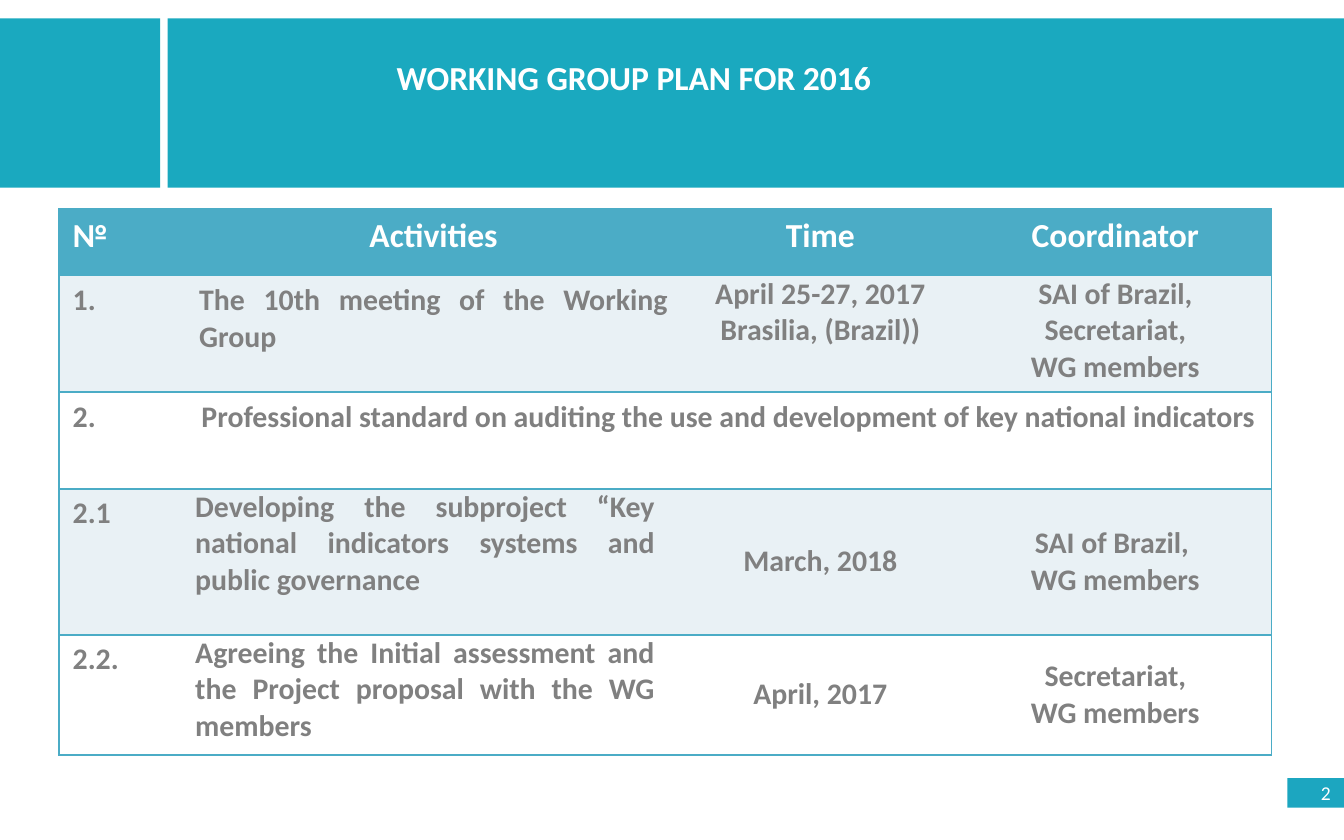
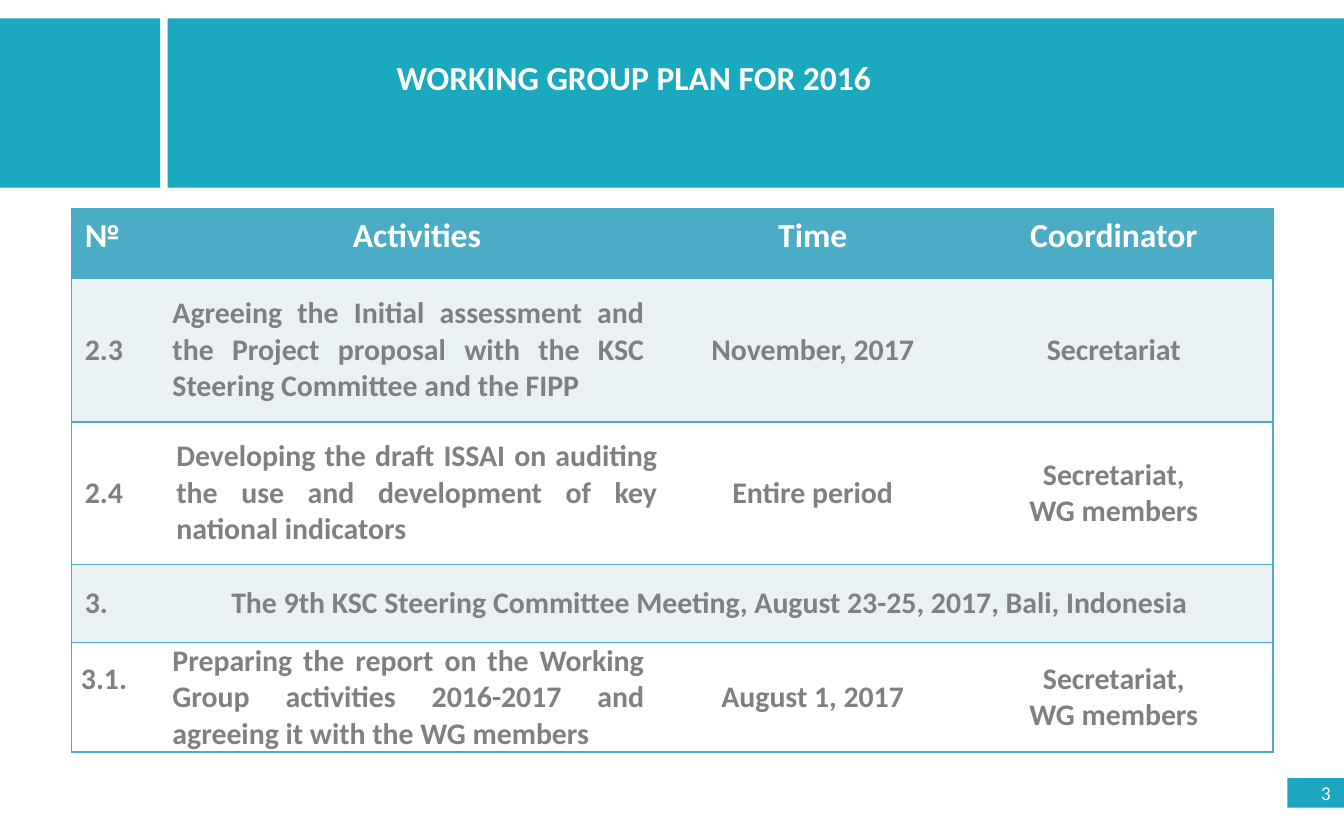
from dataclasses import dataclass

from lxml import etree
from pptx import Presentation
from pptx.dml.color import RGBColor
from pptx.enum.shapes import MSO_SHAPE
from pptx.enum.text import MSO_ANCHOR, MSO_AUTO_SIZE, PP_ALIGN
from pptx.oxml.ns import qn
from pptx.util import Cm, Pt

RECTANGLE = MSO_SHAPE.RECTANGLE
TOP, MIDDLE = MSO_ANCHOR.TOP, MSO_ANCHOR.MIDDLE
LEFT, CENTER = PP_ALIGN.LEFT, PP_ALIGN.CENTER
RIGHT, JUSTIFY = PP_ALIGN.RIGHT, PP_ALIGN.JUSTIFY
FIXED_SIZE = MSO_AUTO_SIZE.NONE


@dataclass(frozen=True)
class Theme:
    font: str = "Calibri"
    band: str = "1AA9BF"
    number_tag: str = "1CA6C0"
    table_accent: str = "4BACC6"
    tint: str = "E9F1F5"
    white: str = "FFFFFF"
    body_text: str = "808080"
    heading_size: float = 18
    body_size: float = 16
    number_size: float = 10.5


THEME = Theme()
TITLE = "WORKING GROUP PLAN FOR 2016"
HEADER = ("TTTT", ["№", "Activities", "Time", "Coordinator"])
NO_GRID_STYLE = "{2D5ABB26-0587-4C30-8999-92F81FD0307C}"

# Each row has one layout letter per cell: T top, M middle, lower case for
# tight margins. In a row of two cells the second spans the other columns.
PLANS = [
    {
        "number": 2,
        "left": 1.12,
        "columns": [2.39, 9.37, 5.25, 5.9],
        "heights": [1.26, 2.2, 1.83, 2.76, 2.27],
        "rows": [
            HEADER,
            ("TTtt", ["1.", "The 10th meeting of the Working Group",
                      "April 25-27, 2017\nBrasilia, (Brazil))",
                      "SAI of Brazil,\nSecretariat,\nWG members"]),
            ("TT", ["2.", "Professional standard on auditing the use and "
                          "development of key national indicators"]),
            ("Ttmm", ["2.1", "Developing the subproject “Key national indicators "
                             "systems and public governance",
                      "March, 2018", "SAI of Brazil, \nWG members"]),
            ("Ttmm", ["2.2.", "Agreeing the Initial assessment and the Project "
                              "proposal with the WG members",
                      "April, 2017", "Secretariat,\nWG members"]),
        ],
    },
    {
        "number": 3,
        "left": 1.35,
        "columns": [1.73, 9.6, 5.36, 6.02],
        "heights": [1.3, 2.73, 2.69, 1.48, 2.06],
        "rows": [
            HEADER,
            ("Mmmm", ["2.3", "Agreeing the Initial assessment and the Project "
                             "proposal with the KSC Steering Committee and the FIPP",
                      "November, 2017", "Secretariat"]),
            ("MMMM", ["2.4", "Developing the draft ISSAI on auditing the use and "
                             "development of key national indicators",
                      "Entire period", "Secretariat,\nWG members"]),
            ("Mm", ["3.", "The 9th KSC Steering Committee Meeting, "
                          "August 23-25, 2017, Bali, Indonesia"]),
            ("ttmm", ["3.1.", "Preparing the report on the Working Group activities "
                              "2016-2017 and agreeing it with the WG members",
                      "August 1, 2017", "Secretariat,\nWG members"]),
        ],
    },
]


def format_text(frame, size, color, bold, align):
    for paragraph in frame.paragraphs:
        paragraph.alignment = align
        for run in paragraph.runs:
            run.font.name = THEME.font
            run.font.size = Pt(size)
            run.font.bold = bold
            run.font.color.rgb = RGBColor.from_string(color)


def add_block(slide, left, top, width, height, color):
    block = slide.shapes.add_shape(RECTANGLE, Cm(left), Cm(top), Cm(width), Cm(height))
    block.shadow.inherit = False
    block.fill.solid()
    block.fill.fore_color.rgb = RGBColor.from_string(color)
    block.line.fill.background()
    return block


prs = Presentation()
prs.slide_width, prs.slide_height = Cm(25.4), Cm(15.88)
layout = prs.slide_layouts[5]

for plan in PLANS:
    slide = prs.slides.add_slide(layout)

    # Header bands, drawn once and kept on the shared layout
    if plan is PLANS[0]:
        for left, width in ((0, 3.03), (3.17, 22.23)):
            band = add_block(slide, left, 0.35, width, 3.2, THEME.band)
            layout.shapes._spTree.insert(2, band._element)

    # Title
    title = slide.shapes.title
    title.left, title.top, title.width, title.height = Cm(7.24), Cm(0.94), Cm(9.58), Cm(1.02)
    title_frame = title.text_frame
    title_frame.text = TITLE
    title_frame.word_wrap = False
    title_frame.auto_size = FIXED_SIZE
    title_frame.vertical_anchor = TOP
    format_text(title_frame, THEME.heading_size, THEME.white, True, LEFT)

    # Page number
    number_tag = add_block(slide, 24.33, 14.71, 1.07, 0.56, THEME.number_tag)
    number_tag.text_frame.text = str(plan["number"])
    number_tag.text_frame.vertical_anchor = MIDDLE
    format_text(number_tag.text_frame, THEME.number_size, THEME.white, False, RIGHT)

    # Plan table
    columns, heights = plan["columns"], plan["heights"]
    frame = slide.shapes.add_table(len(heights), len(columns), Cm(plan["left"]), Cm(3.95),
                                   Cm(sum(columns)), Cm(sum(heights)))
    table = frame.table
    table.first_row = table.horz_banding = False
    table._tbl.tblPr.find(qn("a:tableStyleId")).text = NO_GRID_STYLE
    for column, width in zip(table.columns, columns):
        column.width = Cm(width)
    for row, height in zip(table.rows, heights):
        row.height = Cm(height)

    last_column = len(columns) - 1
    for r, (layouts, texts) in enumerate(plan["rows"]):
        is_header = r == 0
        spans = len(texts) == 2
        if is_header:
            fill, size, color = THEME.table_accent, THEME.heading_size, THEME.white
        else:
            fill = THEME.tint if r % 2 else THEME.white
            size, color = THEME.body_size, THEME.body_text

        # Borders and fills: rules between rows, sides only at the outer edges
        for c in range(len(columns)):
            cell = table.cell(r, c)
            properties = cell._tc.get_or_add_tcPr()
            sides = ["lnL"] * (c == 0) + ["lnR"] * (c == last_column or spans and c == 1)
            for side in sides + ["lnT", "lnB"]:
                line = etree.SubElement(properties, qn(f"a:{side}"), w=str(Pt(1)))
                line_fill = etree.SubElement(line, qn("a:solidFill"))
                etree.SubElement(line_fill, qn("a:srgbClr"), val=THEME.table_accent)
            cell.fill.solid()
            cell.fill.fore_color.rgb = RGBColor.from_string(fill)
        if spans:
            table.cell(r, 1).merge(table.cell(r, last_column))

        # Cell text
        for c, (letter, text) in enumerate(zip(layouts, texts)):
            cell = table.cell(r, c)
            cell.text_frame.text = text
            cell.vertical_anchor = MIDDLE if letter in "Mm" else TOP
            if c == 0:
                align = LEFT
            elif c == 1 and not is_header and not spans:
                align = JUSTIFY
            else:
                align = CENTER
            format_text(cell.text_frame, size, color, True, align)
            if letter.islower():
                cell.margin_left = cell.margin_right = Cm(0.18)
                cell.margin_top = cell.margin_bottom = 0
                first = cell.text_frame.paragraphs[0]
                if c == 0:
                    first.line_spacing = 1.5
                elif c == 1:
                    first._p.get_or_add_pPr().set("marR", str(Cm(0.32)))

prs.save("out.pptx")
